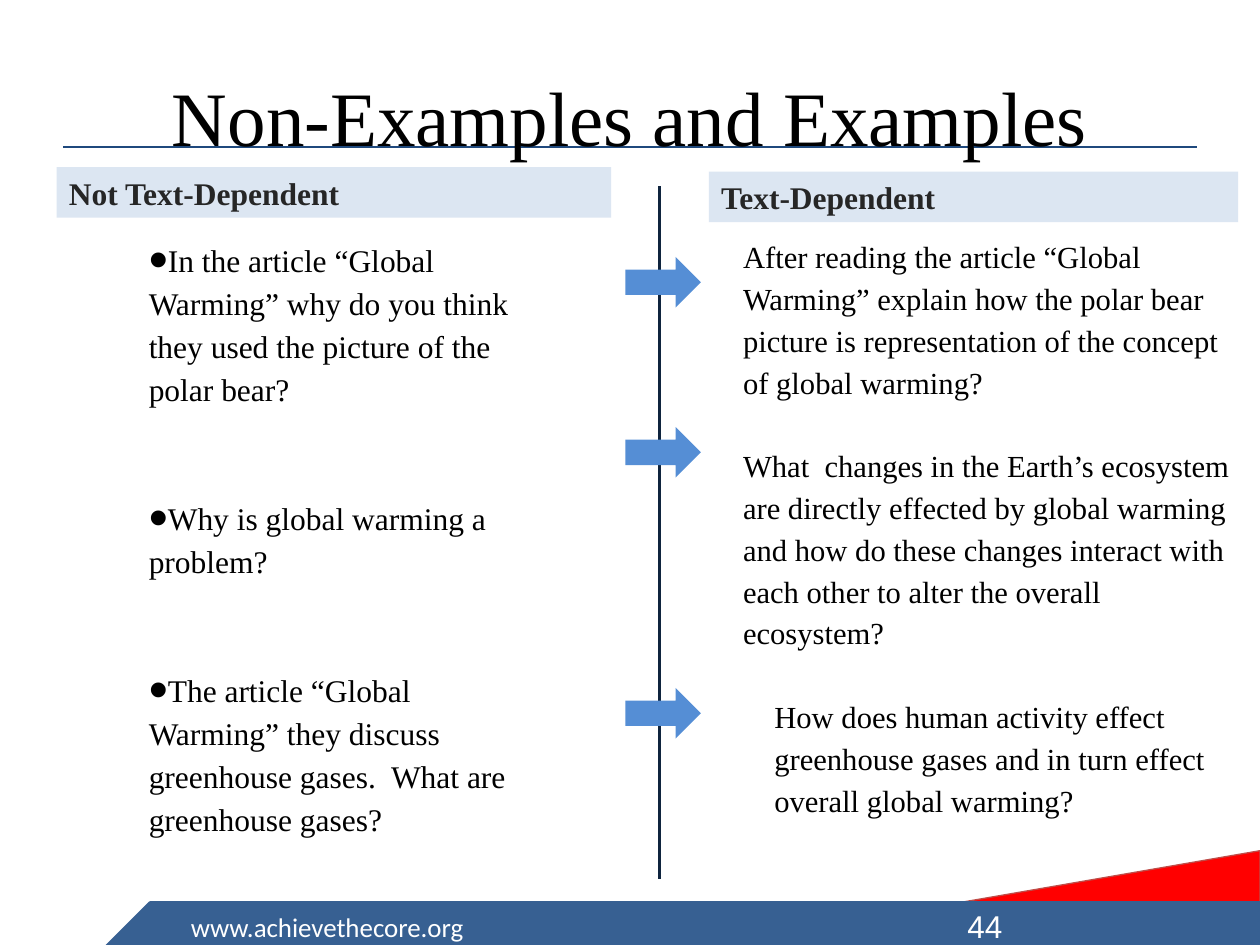
"""Build a slide that sets non-examples beside text-dependent questions."""
import pptx
import pptx.dml.color
import pptx.enum.shapes
import pptx.enum.text
import pptx.oxml.ns
import pptx.util
from lxml import etree

Cm = pptx.util.Cm
Pt = pptx.util.Pt
SHAPE = pptx.enum.shapes.MSO_SHAPE
ANCHOR = pptx.enum.text.MSO_ANCHOR
ALIGN = pptx.enum.text.PP_ALIGN

COLOURS = {
    "black": "000000", "white": "FFFFFF", "heading": "262626",
    "band": "376092", "red": "FF0000", "red edge": "BF4C48",
    "rule": "1F497D", "divider": "0F243E", "arrow": "558ED5",
    "panel": "DCE6F2",
}
SERIF = "Times New Roman"
LEFT_QUESTIONS = [
    "In the article “Global Warming” why do you think they used the picture of the polar bear?",
    "Why is global warming a problem?",
    "The article “Global Warming” they discuss greenhouse gases.  What are greenhouse gases?",
]
RIGHT_QUESTIONS = [
    "After reading the article “Global Warming” explain how the polar bear picture is "
    "representation of the concept of global warming?",
    "What  changes in the Earth’s ecosystem are directly effected by global warming and how "
    "do these changes interact with each other to alter the overall ecosystem?",
    "How does human activity effect greenhouse gases and in turn effect overall global warming?",
]
HEADINGS = [
    ("Not Text-Dependent", (1.14, 3.37, 11.18, 1.02)),
    ("Text-Dependent", (14.29, 3.46, 10.67, 1.02)),
]
ARROW_TOPS = [5.18, 8.61, 13.87]


def colour(name):
    """Return the named colour."""
    return pptx.dml.color.RGBColor.from_string(COLOURS[name])


def apply(target, values):
    """Set each format value on the target."""
    for name, value in values.items():
        setattr(target, name, value)


def add_span(para, text, font, ink):
    """Add a formatted run to a paragraph."""
    span = para.add_run()
    span.text = text
    apply(span.font, font)
    span.font.color.rgb = colour(ink)


def add_solid(page, kind, place, fill, edge=None, edge_width=0):
    """Add a flat shape, outlined only when an edge is named."""
    shape = page.shapes.add_shape(kind, *map(Cm, place))
    shape.shadow.inherit = False
    shape.fill.solid()
    shape.fill.fore_color.rgb = colour(fill)
    if edge:
        shape.line.color.rgb = colour(edge)
        shape.line.width = Pt(edge_width)
    else:
        shape.line.fill.background()
    return shape


def add_line(page, ends, ink):
    """Add a straight line without a shadow."""
    line = page.shapes.add_connector(pptx.enum.shapes.MSO_CONNECTOR.STRAIGHT, *map(Cm, ends))
    line.line.color.rgb = colour(ink)
    line.line.width = Pt(1.5)
    etree.SubElement(line._element.spPr, pptx.oxml.ns.qn("a:effectLst"))


def add_text(page, place, text, font, ink, anchor=ANCHOR.TOP, align=ALIGN.LEFT):
    """Add a box with one line of text."""
    box = page.shapes.add_textbox(*map(Cm, place))
    apply(box.text_frame, {"word_wrap": True, "vertical_anchor": anchor})
    para = box.text_frame.paragraphs[0]
    para.alignment = align
    add_span(para, text, font, ink)


def add_heading(page, place, text):
    """Add a column heading on a pale panel."""
    panel = add_solid(page, SHAPE.RECTANGLE, place, "panel")
    apply(panel.text_frame, {"word_wrap": True, "vertical_anchor": ANCHOR.MIDDLE})
    para = panel.text_frame.paragraphs[0]
    para.alignment = ALIGN.LEFT
    add_span(para, text, {"name": SERIF, "size": Pt(18), "bold": True}, "heading")


def add_bullet(para):
    """Give a paragraph a large black bullet."""
    properties = para._p.get_or_add_pPr()
    properties.set("marL", "0")
    properties.set("indent", "0")
    tint = etree.SubElement(properties, pptx.oxml.ns.qn("a:buClr"))
    etree.SubElement(tint, pptx.oxml.ns.qn("a:srgbClr"), val=COLOURS["black"])
    etree.SubElement(properties, pptx.oxml.ns.qn("a:buSzPct"), val="173000")
    etree.SubElement(properties, pptx.oxml.ns.qn("a:buFont"), typeface="Arial")
    etree.SubElement(properties, pptx.oxml.ns.qn("a:buChar"), char="•")


def add_questions(page, place, questions, size, gap, bulleted=False):
    """Add a column of spaced questions and return its paragraphs."""
    box = page.shapes.add_textbox(*map(Cm, place))
    frame = box.text_frame
    frame.word_wrap = True
    for index, question in enumerate(questions):
        para = frame.add_paragraph() if index else frame.paragraphs[0]
        if bulleted:
            add_bullet(para)
        apply(para, {"line_spacing": 1.14, "space_before": Pt(gap if index else 0)})
        add_span(para, question, {"name": SERIF, "size": Pt(size)}, "black")
    return frame.paragraphs


def add_footer(page):
    """Add the red wedge, the blue band, the address and the page number."""
    wedge = add_solid(page, SHAPE.RIGHT_TRIANGLE, (14.4, 17.15, 11, 1.9), "red", "red edge", 0.75)
    wedge._element.spPr.xfrm.set("flipH", "1")
    add_solid(page, SHAPE.RECTANGLE, (3.05, 18.2, 22.35, 0.88), "band", "band", 2)
    corner = add_solid(page, SHAPE.RIGHT_TRIANGLE, (2.15, 18.2, 0.88, 0.88), "band", "band", 2)
    corner.rotation = 270
    add_text(page, (3.6, 18.24, 6.78, 0.88), "www.achievethecore.org",
             {"name": "Calibri", "size": Pt(15.4)}, "white", ANCHOR.MIDDLE)
    add_text(page, (19.25, 18.17, 5.92, 0.88), "44", {"name": "Arial", "size": Pt(18)}, "white")


def main():
    """Build and save the deck."""
    deck = pptx.Presentation()
    apply(deck, {"slide_width": Cm(25.4), "slide_height": Cm(19.05)})
    page = deck.slides.add_slide(deck.slide_layouts[6])
    add_footer(page)
    add_line(page, (1.27, 2.96, 24.13, 2.96), "rule")
    add_text(page, (1.27, 1.27, 22.86, 1.45), "Non-Examples and Examples",
             {"name": SERIF, "size": Pt(44)}, "black", align=ALIGN.CENTER)
    add_questions(page, (2.75, 4.62, 8.43, 13.39), LEFT_QUESTIONS, 18, 49.2, bulleted=True)
    answers = add_questions(page, (14.73, 4.57, 10.67, 12.17), RIGHT_QUESTIONS, 17.5, 23.9)
    answers[-1]._p.get_or_add_pPr().set("marL", str(Cm(0.63)))
    for text, place in HEADINGS:
        add_heading(page, place, text)
    add_line(page, (13.3, 3.75, 13.3, 17.72), "divider")
    for top in ARROW_TOPS:
        add_solid(page, SHAPE.RIGHT_ARROW, (12.61, top, 1.52, 1.02), "arrow")
    deck.save("out.pptx")


if __name__ == "__main__":
    main()
